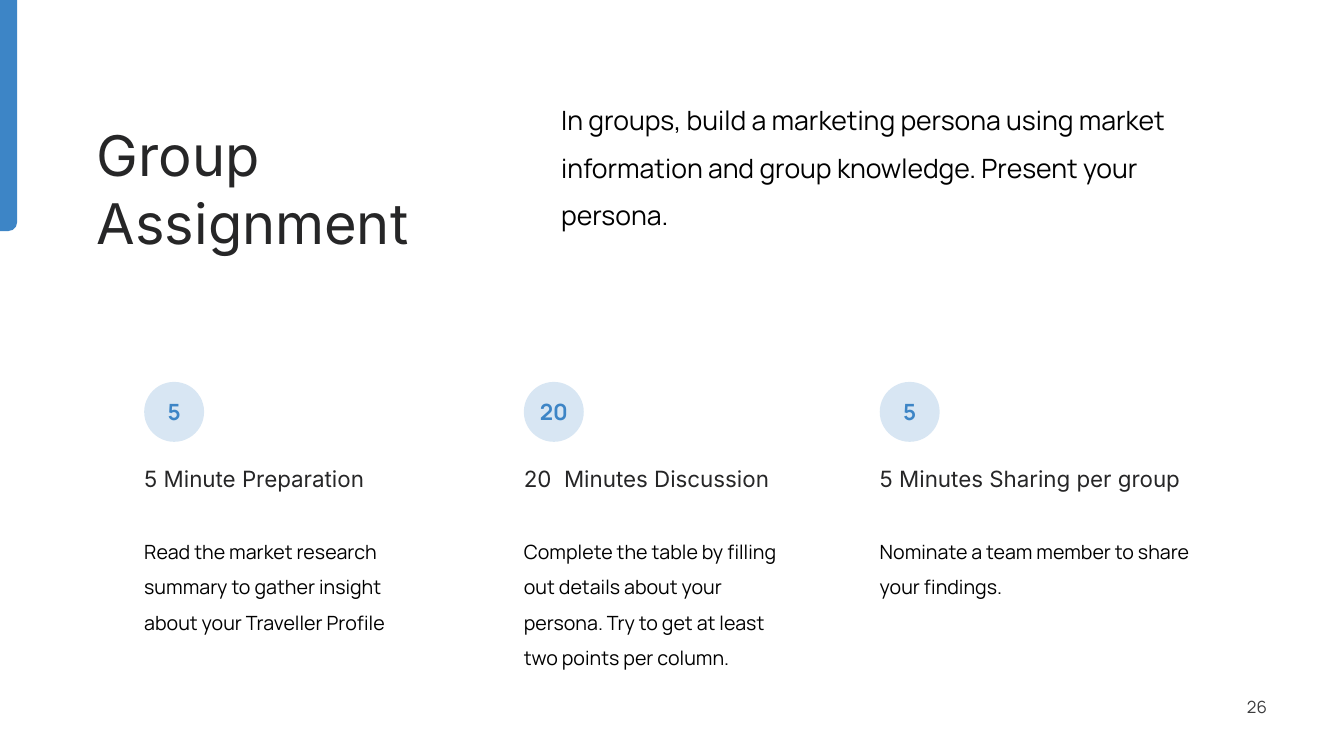
from lxml.etree import SubElement
from pptx import Presentation
from pptx.dml.color import RGBColor
from pptx.enum.shapes import MSO_SHAPE as Shape
from pptx.enum.text import MSO_ANCHOR as Anchor, MSO_AUTO_SIZE as AutoSize, PP_ALIGN as Align
from pptx.oxml.ns import qn
from pptx.util import Pt

BLUE = RGBColor(0x3D, 0x85, 0xC6)
INK = RGBColor(0x26, 0x26, 0x27)
GREY = RGBColor(0x3B, 0x3B, 0x3C)
BLACK = RGBColor(0, 0, 0)
HEADING_FONT, BODY_FONT = "Inter", "Manrope"

BADGE_SIZE = 42.8
STEPS_TOP = 272.8
STEPS = [
    (103, 196, "5", "5 Minute Preparation",
     "Read the market research summary to gather insight about your Traveller Profile"),
    (374.2, 196, "20", "20  Minutes Discussion",
     "Complete the table by filling out details about your persona. "
     "Try to get at least two points per column."),
    (628.4, 222, "5", "5 Minutes Sharing per group",
     "Nominate a team member to share your findings."),
]


def write(paragraph, text, *, size, font=BODY_FONT, color=BLACK, bold=False,
          align=Align.LEFT, spacing=1.0, before=0):
    paragraph.text = text
    paragraph.alignment = align
    paragraph.line_spacing = spacing
    paragraph.space_before = Pt(before)
    for run in paragraph.runs:
        run.font.size = Pt(size)
        run.font.name = font
        run.font.bold = bold
        run.font.color.rgb = color


def set_frame(shape, inset=0, anchor=Anchor.TOP):
    frame = shape.text_frame
    frame.word_wrap = True
    frame.auto_size = AutoSize.NONE
    frame.vertical_anchor = anchor
    frame.margin_left = frame.margin_right = Pt(inset)
    frame.margin_top = frame.margin_bottom = Pt(inset)
    return frame


def add_text_frame(slide, left, top, width, height, **frame_format):
    box = slide.shapes.add_textbox(Pt(left), Pt(top), Pt(width), Pt(height))
    return set_frame(box, **frame_format)


def add_filled_shape(slide, kind, left, top, width, height, opacity=100):
    shape = slide.shapes.add_shape(kind, Pt(left), Pt(top), Pt(width), Pt(height))
    shape.shadow.inherit = False
    shape.line.fill.background()
    shape.fill.solid()
    shape.fill.fore_color.rgb = BLUE
    if opacity < 100:
        color = shape.fill._xPr.find(".//" + qn("a:srgbClr"))
        SubElement(color, qn("a:alpha"), val=str(opacity * 1000))
    return shape


def add_edge_bar(slide, left, top, width, height):
    """Draw the bar on its side and turn it, so the round corner is at bottom right."""
    bar = add_filled_shape(slide, Shape.ROUND_1_RECTANGLE, left + (width - height) / 2,
                           top + (height - width) / 2, height, width)
    bar.adjustments[0] = 0.5
    bar.rotation = 90


def add_title(slide, left, top, width, height):
    title = slide.shapes.title
    title.left, title.top, title.width, title.height = Pt(left), Pt(top), Pt(width), Pt(height)
    write(set_frame(title).paragraphs[0], "Group\vAssignment",
          size=40, font=HEADING_FONT, color=INK)


def add_brief(slide, left, top, width, height):
    frame = add_text_frame(slide, left, top, width, height, inset=7.2)
    write(frame.paragraphs[0],
          "In groups, build a marketing persona using market information "
          "and group knowledge. Present your persona.", size=19, spacing=1.5)


def add_step(slide, left, top, width, minutes, heading, body):
    badge = add_filled_shape(slide, Shape.OVAL, left, top, BADGE_SIZE, BADGE_SIZE, opacity=20)
    write(set_frame(badge, anchor=Anchor.MIDDLE).paragraphs[0], minutes,
          size=16, color=BLUE, bold=True, align=Align.CENTER)
    frame = add_text_frame(slide, left, top + 54, width, 144)
    write(frame.paragraphs[0], heading, size=16, font=HEADING_FONT, color=INK, spacing=1.3)
    write(frame.add_paragraph(), body, size=14, spacing=1.5, before=25.5)


def add_page_number(slide, left, top, width, height):
    frame = add_text_frame(slide, left, top, width, height, anchor=Anchor.MIDDLE)
    write(frame.paragraphs[0], "26", size=12, color=GREY, align=Align.RIGHT)


def main():
    presentation = Presentation()
    presentation.slide_width, presentation.slide_height = Pt(960), Pt(540)
    slide = presentation.slides.add_slide(presentation.slide_layouts[5])
    add_edge_bar(slide, 0, 0, 12.2, 165)
    add_title(slide, 69.2, 86.4, 300, 97.2)
    add_brief(slide, 393.8, 55.4, 497.6, 106.6)
    for left, width, minutes, heading, body in STEPS:
        add_step(slide, left, STEPS_TOP, width, minutes, heading, body)
    add_page_number(slide, 869.8, 490.3, 35.2, 28.8)
    presentation.save("out.pptx")


if __name__ == "__main__":
    main()
